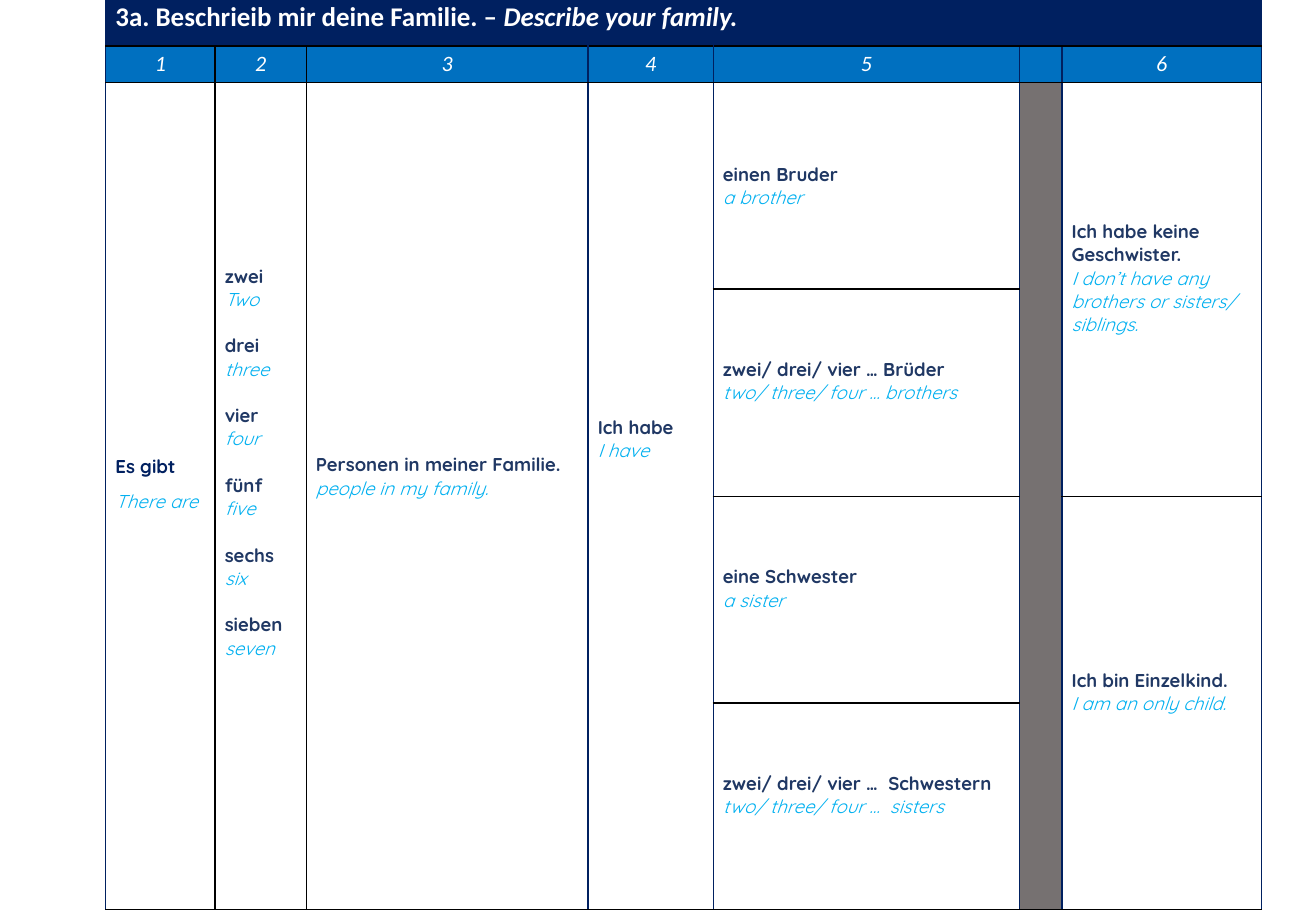
from lxml.etree import SubElement
from pptx import Presentation
from pptx.dml.color import RGBColor
from pptx.enum.text import MSO_ANCHOR as Anchor, PP_ALIGN as Align
from pptx.oxml.ns import qn
from pptx.util import Emu, Pt

EMU_PER_PX = 9144
NAVY, BLUE, GREY, BLACK = "002060", "0070C0", "767171", "000000"
INK, SKY, WHITE = "203864", "00B0F0", "FFFFFF"
COLUMNS = [90, 75, 232, 103, 252, 35, 164]
ROWS = [47, 29, 170, 171, 170, 170]
LINE = 13.75

NUMBERS = [("zwei", "Two"), ("drei", "three"), ("vier", "four"),
           ("fünf", "five"), ("sechs", "six"), ("sieben", "seven")]
PHRASES = [
    (2, 1, 4, NUMBERS, {"gap": LINE, "bottom": 60}),
    (2, 0, 4, [("Es gibt", "There are")], {"ink": NAVY, "spacing": 1.5, "bottom": 33}),
    (2, 2, 4, [("Personen in meiner Familie.", "people in my family.")], {"bottom": 36}),
    (2, 3, 4, [("Ich habe", "I have")], {"bottom": 98}),
    (2, 4, 1, [("einen Bruder", "a brother")], {"bottom": 4}),
    (3, 4, 1, [("zwei/ drei/ vier … Brüder", "two/ three/ four … brothers")], {}),
    (4, 4, 1, [("eine Schwester", "a sister")], {}),
    (5, 4, 1, [("zwei/ drei/ vier …  Schwestern", "two/ three/ four …  sisters")], {}),
    (2, 6, 2, [("Ich habe keine Geschwister.",
                "I don’t have any brothers or sisters/ siblings.")], {}),
    (4, 6, 2, [("Ich bin Einzelkind.", "I am an only child.")], {}),
]


def px(length):
    return Emu(length * EMU_PER_PX)


def color(value):
    return RGBColor.from_string(value)


def add_span(para, text, font="Quicksand", size=11, ink=INK, bold=False, italic=False):
    span = para.add_run()
    span.text = text
    span.font.name, span.font.size = font, Pt(size)
    span.font.bold, span.font.italic = bold, italic
    span.font.color.rgb = color(ink)


class PhraseSheet:
    """Draws a table of phrases with translations on one slide."""

    def __init__(self, slide):
        self.slide = slide

    def grid(self, left, top):
        frame = self.slide.shapes.add_table(
            len(ROWS), len(COLUMNS), px(left), px(top), px(sum(COLUMNS)), px(sum(ROWS)))
        self.table = frame.table
        self.table.first_row = self.table.horz_banding = False
        for column, width in zip(self.table.columns, COLUMNS):
            column.width = px(width)
        for row, height in zip(self.table.rows, ROWS):
            row.height = px(height)
        for row in range(len(ROWS)):
            for column in range(len(COLUMNS)):
                self.style_cell(row, column)

    def style_cell(self, row, column):
        cell = self.table.cell(row, column)
        cell.margin_left = cell.margin_right = px(8)
        cell.margin_top = cell.margin_bottom = px(4)
        para = cell.text_frame.paragraphs[0]
        SubElement(para._p, qn("a:endParaRPr"), sz="1100")
        self.border(cell, "L", BLACK if row and column in (1, 2) else NAVY)
        self.border(cell, "R", BLACK if row and column in (0, 1) else NAVY)
        self.border(cell, "T", BLACK if row else NAVY)
        self.border(cell, "B", BLACK)
        fill = NAVY if row == 0 else BLUE if row == 1 else GREY if column == 5 else None
        if fill:
            cell.fill.solid()
            cell.fill.fore_color.rgb = color(fill)
        else:
            cell.fill.background()

    def border(self, cell, side, ink):
        line = SubElement(cell._tc.get_or_add_tcPr(), qn(f"a:ln{side}"), w=str(Pt(1)))
        SubElement(SubElement(line, qn("a:solidFill")), qn("a:srgbClr"), val=ink)

    def merge(self, row, column, height=1, width=1):
        cell = self.table.cell(row, column)
        if height * width > 1:
            cell.merge(self.table.cell(row + height - 1, column + width - 1))
        cell.vertical_anchor = Anchor.MIDDLE
        return cell

    def title(self, text, translation):
        cell = self.merge(0, 0, width=5)
        cell.margin_top = cell.margin_bottom = px(5)
        para = cell.text_frame.paragraphs[0]
        look = {"font": "Calibri", "size": 16, "ink": WHITE, "bold": True}
        add_span(para, text, **look)
        add_span(para, translation, italic=True, **look)

    def heading(self, column, text):
        para = self.table.cell(1, column).text_frame.paragraphs[0]
        para.alignment = Align.CENTER
        add_span(para, text, font="Calibri", size=13, ink=WHITE, italic=True)

    def phrases(self, row, column, height, pairs, ink=INK, spacing=1.0, gap=0, bottom=23):
        cell = self.merge(row, column, height)
        cell.margin_bottom = px(bottom)
        frame = cell.text_frame
        for index, (german, english) in enumerate(pairs):
            para = frame.add_paragraph() if index else frame.paragraphs[0]
            para.line_spacing = spacing
            para.space_before = Pt(gap if index else 0)
            add_span(para, german, ink=ink, bold=True)
            para = frame.add_paragraph()
            para.line_spacing = spacing
            add_span(para, english, ink=SKY, italic=True)


def main():
    deck = Presentation()
    deck.slide_width, deck.slide_height = px(1083), px(750)
    sheet = PhraseSheet(deck.slides.add_slide(deck.slide_layouts[6]))
    sheet.grid(87, -9)
    sheet.title("3a. Beschrieib mir deine Familie. – ", "Describe your family.")
    for number, column in enumerate([0, 1, 2, 3, 4, 6], start=1):
        sheet.heading(column, str(number))
    sheet.merge(2, 5, height=4)
    for row, column, height, pairs, look in PHRASES:
        sheet.phrases(row, column, height, pairs, **look)
    deck.save("out.pptx")


if __name__ == "__main__":
    main()
